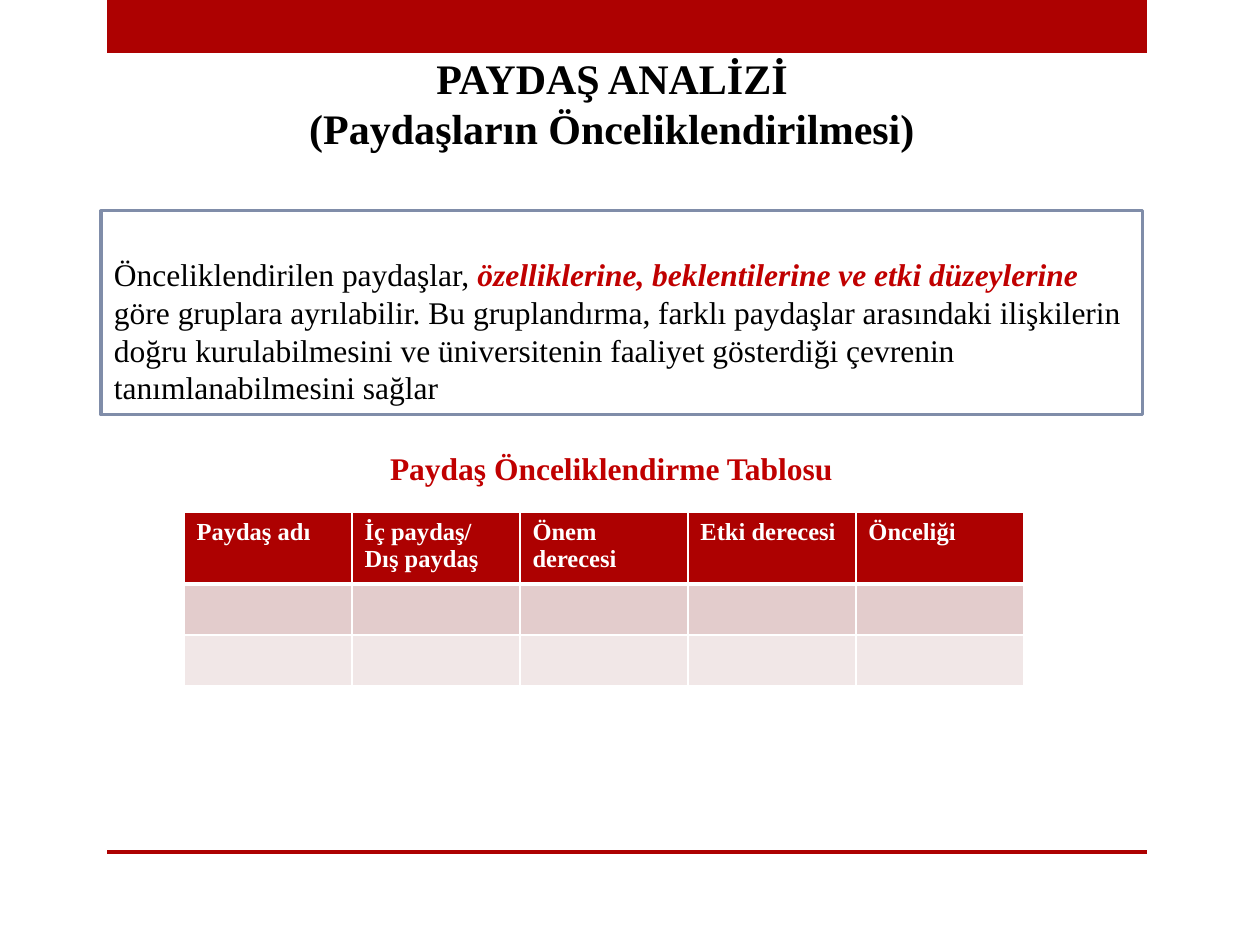
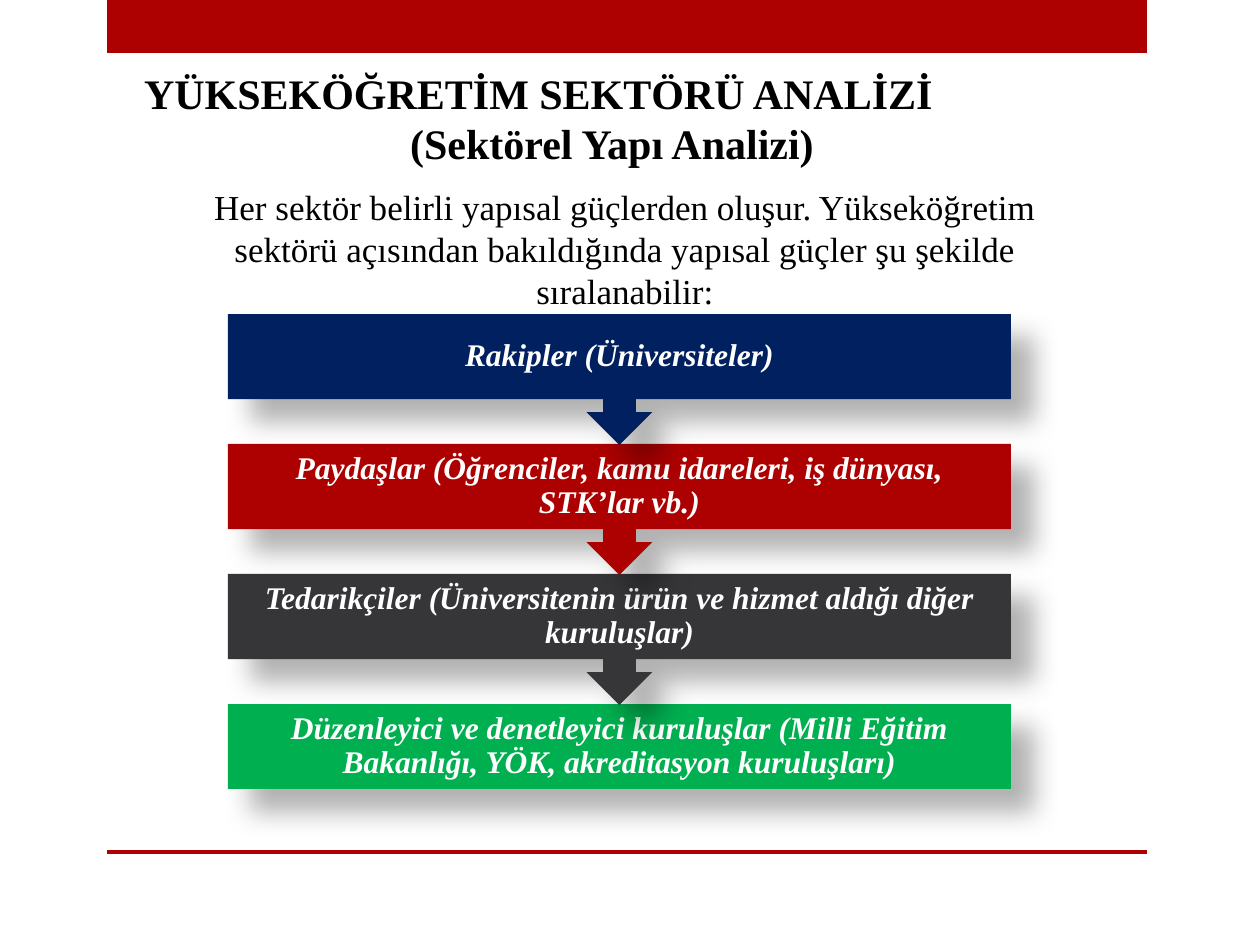
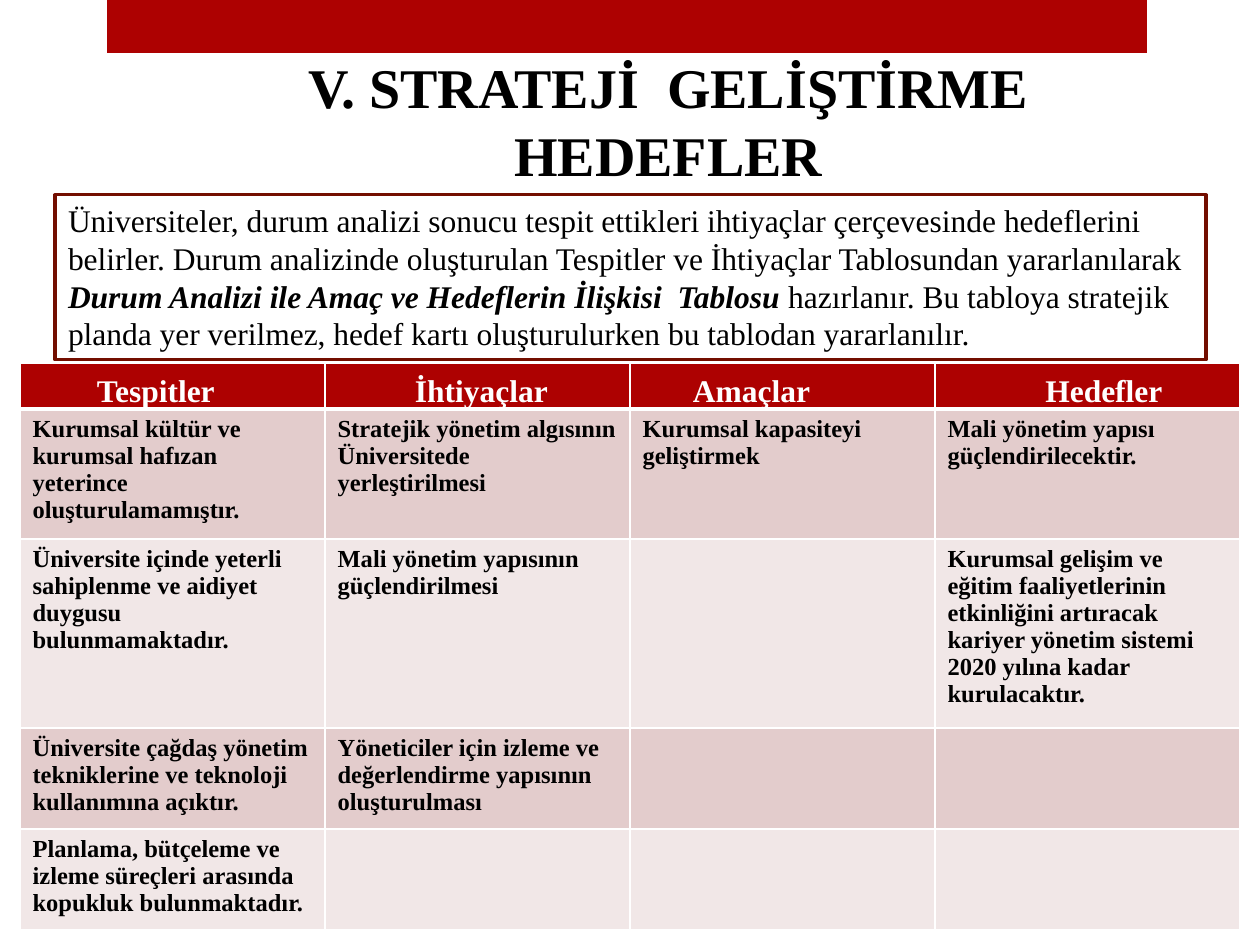
import pptx
import pptx.dml.color
import pptx.enum.shapes
import pptx.enum.text
import pptx.oxml
import pptx.oxml.ns
import pptx.util

RGB = pptx.dml.color.RGBColor
SHAPE = pptx.enum.shapes.MSO_SHAPE
LEFT = pptx.enum.text.PP_ALIGN.LEFT
CENTER = pptx.enum.text.PP_ALIGN.CENTER
TOP = pptx.enum.text.MSO_ANCHOR.TOP
MIDDLE = pptx.enum.text.MSO_ANCHOR.MIDDLE
BOTTOM = pptx.enum.text.MSO_ANCHOR.BOTTOM

FONT = "Times New Roman"
BLACK = RGB(0x00, 0x00, 0x00)
WHITE = RGB(0xFF, 0xFF, 0xFF)
RED = RGB(0xAD, 0x01, 0x01)
ACCENT_RED = RGB(0xC0, 0x00, 0x00)
MAROON = RGB(0x73, 0x0E, 0x00)
SLATE = RGB(0x80, 0x8D, 0xA9)
NAVY = RGB(0x00, 0x20, 0x60)
CHARCOAL = RGB(0x36, 0x36, 0x39)
GREEN = RGB(0x00, 0xB0, 0x50)
ROW_TINTS = (RGB(0xE3, 0xCC, 0xCC), RGB(0xF1, 0xE7, 0xE7))

PX_PER_INCH = 126
INSETS = (13, 6, 13, 6)
BANDS = ((107, 0, 1040, 53), (107, 850, 1040, 4))

# Content: a paragraph is a list of (text, style) runs
PRIORITY_TITLE = ("PAYDAŞ ANALİZİ", "(Paydaşların Önceliklendirilmesi)")
PRIORITY_NOTE = [
    ("Önceliklendirilen paydaşlar, ", {}),
    ("özelliklerine, beklentilerine ve etki düzeylerine",
     {"bold": True, "italic": True, "color": ACCENT_RED}),
    (" göre gruplara ayrılabilir. Bu gruplandırma, farklı paydaşlar arasındaki "
     "ilişkilerin doğru kurulabilmesini ve üniversitenin faaliyet gösterdiği "
     "çevrenin tanımlanabilmesini sağlar", {}),
]
PRIORITY_CAPTION = "Paydaş Önceliklendirme Tablosu"
PRIORITY_ROWS = [
    ["Paydaş adı", "İç paydaş/ Dış paydaş", "Önem derecesi", "Etki derecesi", "Önceliği"],
    [""] * 5,
    [""] * 5,
]

SECTOR_TITLE = ("YÜKSEKÖĞRETİM SEKTÖRÜ ANALİZİ", "(Sektörel Yapı Analizi)")
SECTOR_INTRO = ("Her sektör belirli yapısal güçlerden oluşur. Yükseköğretim sektörü "
                "açısından bakıldığında yapısal güçler şu şekilde sıralanabilir:")
SECTOR_FORCES = [
    ("Rakipler (Üniversiteler)", NAVY),
    ("Paydaşlar (Öğrenciler, kamu idareleri, iş dünyası, STK’lar vb.)", RED),
    ("Tedarikçiler (Üniversitenin ürün ve hizmet aldığı diğer kuruluşlar)", CHARCOAL),
    ("Düzenleyici ve denetleyici kuruluşlar (Milli Eğitim Bakanlığı, YÖK, "
     "akreditasyon kuruluşları)", GREEN),
]

GOALS_TITLE = ("V. STRATEJİ  GELİŞTİRME", "HEDEFLER")
GOALS_NOTE = [
    ("Üniversiteler, durum analizi sonucu tespit ettikleri ihtiyaçlar çerçevesinde "
     "hedeflerini belirler. Durum analizinde oluşturulan Tespitler ve İhtiyaçlar "
     "Tablosundan yararlanılarak ", {}),
    ("Durum Analizi ile Amaç ve Hedeflerin İlişkisi  Tablosu ",
     {"bold": True, "italic": True}),
    ("hazırlanır. Bu tabloya stratejik planda yer verilmez, hedef kartı "
     "oluşturulurken bu tablodan yararlanılır.", {}),
]
GOALS_ROWS = [
    ["Tespitler", "İhtiyaçlar", "Amaçlar", "Hedefler"],
    ["Kurumsal kültür ve kurumsal hafızan yeterince oluşturulamamıştır.",
     "Stratejik yönetim algısının Üniversitede yerleştirilmesi",
     "Kurumsal kapasiteyi geliştirmek",
     "Mali yönetim yapısı güçlendirilecektir."],
    ["Üniversite içinde yeterli sahiplenme ve aidiyet duygusu bulunmamaktadır.",
     "Mali yönetim yapısının güçlendirilmesi",
     "",
     "Kurumsal gelişim ve eğitim faaliyetlerinin etkinliğini artıracak kariyer "
     "yönetim sistemi 2020 yılına kadar kurulacaktır."],
    ["Üniversite çağdaş yönetim tekniklerine ve teknoloji kullanımına açıktır.",
     "Yöneticiler için izleme ve değerlendirme yapısının oluşturulması", "", ""],
    ["Planlama, bütçeleme ve izleme süreçleri arasında kopukluk bulunmaktadır.",
     "", "", ""],
]
GOALS_HEADER_LAYOUT = [(LEFT, 77), (CENTER, 8), (LEFT, 63), (CENTER, 33)]


def px(length):
    return pptx.util.Emu(round(length * 914400 / PX_PER_INCH))


def px_all(lengths):
    return [px(length) for length in lengths]


def add_runs(paragraph, runs, size, color=BLACK, bold=False, italic=False,
             align=LEFT, indent=0):
    paragraph.alignment = align
    paragraph._p.get_or_add_pPr().set("marL", str(px(indent)))
    for text, style in runs:
        run = paragraph.add_run()
        run.text = text
        run.font.name = FONT
        run.font.size = pptx.util.Pt(size)
        run.font.bold = style.get("bold", bold)
        run.font.italic = style.get("italic", italic)
        run.font.color.rgb = style.get("color", color)


def prepare_frame(shape, anchor=TOP, insets=INSETS):
    frame = shape.text_frame
    frame.word_wrap = True
    frame.auto_size = pptx.enum.text.MSO_AUTO_SIZE.NONE
    frame.vertical_anchor = anchor
    (frame.margin_left, frame.margin_top,
     frame.margin_right, frame.margin_bottom) = px_all(insets)
    return frame


def add_block(slide, kind, box, fill, line=None):
    block = slide.shapes.add_shape(kind, *px_all(box))
    block.shadow.inherit = False
    block.fill.solid()
    block.fill.fore_color.rgb = fill
    if line:
        block.line.color.rgb = line
        block.line.width = pptx.util.Pt(1.75)
    else:
        block.line.fill.background()
    return block


def start_slide(deck, title_lines, box, size=24, first_line=(CENTER, 0)):
    """Add a slide with the shared bands and a two-line title."""
    slide = deck.slides.add_slide(deck.slide_layouts[5])
    for band in BANDS:
        add_block(slide, SHAPE.RECTANGLE, band, RED)
    title = slide.shapes.title
    title.left, title.top, title.width, title.height = px_all(box)
    frame = prepare_frame(title)
    for index, (text, (align, indent)) in enumerate(
            zip(title_lines, (first_line, (CENTER, 0)))):
        paragraph = frame.add_paragraph() if index else frame.paragraphs[0]
        add_runs(paragraph, [(text, {})], size, bold=True, align=align, indent=indent)
    return slide


def add_label(slide, box, text, size, **style):
    frame = prepare_frame(slide.shapes.add_textbox(*px_all(box)))
    add_runs(frame.paragraphs[0], [(text, {})], size, align=CENTER, **style)


def add_note(slide, box, runs, line, insets=INSETS):
    note = add_block(slide, SHAPE.RECTANGLE, box, WHITE, line)
    add_runs(prepare_frame(note, insets=insets).paragraphs[0], runs, 18)


def add_shadow(shape):
    effects = shape._element.spPr.find(pptx.oxml.ns.qn("a:effectLst"))
    effects.append(pptx.oxml.parse_xml(
        f'<a:outerShdw {pptx.oxml.ns.nsdecls("a")} blurRad="190500" dist="228600" '
        'dir="2700000" rotWithShape="0"><a:srgbClr val="000000">'
        '<a:alpha val="30000"/></a:srgbClr></a:outerShdw>'))


def add_borders(cell, bottom):
    properties = cell._tc.get_or_add_tcPr()
    for side, points in (("L", 1), ("R", 1), ("T", 1), ("B", bottom)):
        properties.append(pptx.oxml.parse_xml(
            f'<a:ln{side} {pptx.oxml.ns.nsdecls("a")} w="{points * 12700}">'
            f'<a:solidFill><a:srgbClr val="{WHITE}"/></a:solidFill></a:ln{side}>'))


def add_banded_table(slide, rows, left, top, column_width, heights, header_layout=None):
    """Add a table; header_layout gives flush, bottom-set headings (align, indent)."""
    columns = len(rows[0])
    box = (left, top, column_width * columns, sum(heights))
    table = slide.shapes.add_table(len(rows), columns, *px_all(box)).table
    for column in table.columns:
        column.width = px(column_width)
    for r, (texts, height) in enumerate(zip(rows, heights)):
        table.rows[r].height = px(height)
        is_header = r == 0
        for c, text in enumerate(texts):
            cell = table.cell(r, c)
            add_borders(cell, 3 if is_header else 1)
            cell.fill.solid()
            cell.fill.fore_color.rgb = RED if is_header else ROW_TINTS[(r - 1) % 2]
            size, align, indent = 14, LEFT, 0
            if is_header and header_layout:
                size = 18
                align, indent = header_layout[c]
                cell.vertical_anchor = BOTTOM
                cell.margin_left = cell.margin_right = 0
                cell.margin_top = cell.margin_bottom = 0
            if text:
                add_runs(cell.text_frame.paragraphs[0], [(text, {})], size,
                         WHITE if is_header else BLACK, bold=True,
                         align=align, indent=indent)


def build_priority_slide(deck):
    slide = start_slide(deck, PRIORITY_TITLE, (106, 46, 1012, 165))
    add_note(slide, (101, 211, 1042, 204), PRIORITY_NOTE, SLATE, (13, 44, 13, 6))
    add_banded_table(slide, PRIORITY_ROWS, 184, 512, 168, (72, 51, 51))
    add_label(slide, (321, 443, 581, 50), PRIORITY_CAPTION, 18,
              color=ACCENT_RED, bold=True)


def build_sector_slide(deck):
    slide = start_slide(deck, SECTOR_TITLE, (106, 61, 1012, 115), first_line=(LEFT, 25))
    add_label(slide, (164, 179, 922, 134), SECTOR_INTRO, 20)
    left, top, width, pitch = 228, 314, 783, 130
    last = len(SECTOR_FORCES) - 1
    # Bottom force first, so that each arrow lies over the box below it
    for index in range(last, -1, -1):
        text, color = SECTOR_FORCES[index]
        kind, height = ((SHAPE.RECTANGLE, 85) if index == last
                        else (SHAPE.DOWN_ARROW_CALLOUT, 131))
        force = add_block(slide, kind, (left, top + index * pitch, width, height), color)
        add_shadow(force)
        paragraph = prepare_frame(force, MIDDLE, (18, 0, 18, 0)).paragraphs[0]
        paragraph.line_spacing = 0.9
        add_runs(paragraph, [(text, {})], 18, WHITE, bold=True, italic=True, align=CENTER)


def build_goals_slide(deck):
    slide = start_slide(deck, GOALS_TITLE, (227, 47, 883, 149), size=32)
    add_note(slide, (55, 195, 1151, 165), GOALS_NOTE, MAROON)
    add_banded_table(slide, GOALS_ROWS, 20, 363, 305, (46, 130, 189, 101, 101),
                     GOALS_HEADER_LAYOUT)


def main():
    deck = pptx.Presentation()
    deck.slide_width, deck.slide_height = px(1260), px(945)
    build_priority_slide(deck)
    build_sector_slide(deck)
    build_goals_slide(deck)
    deck.save("out.pptx")


if __name__ == "__main__":
    main()
